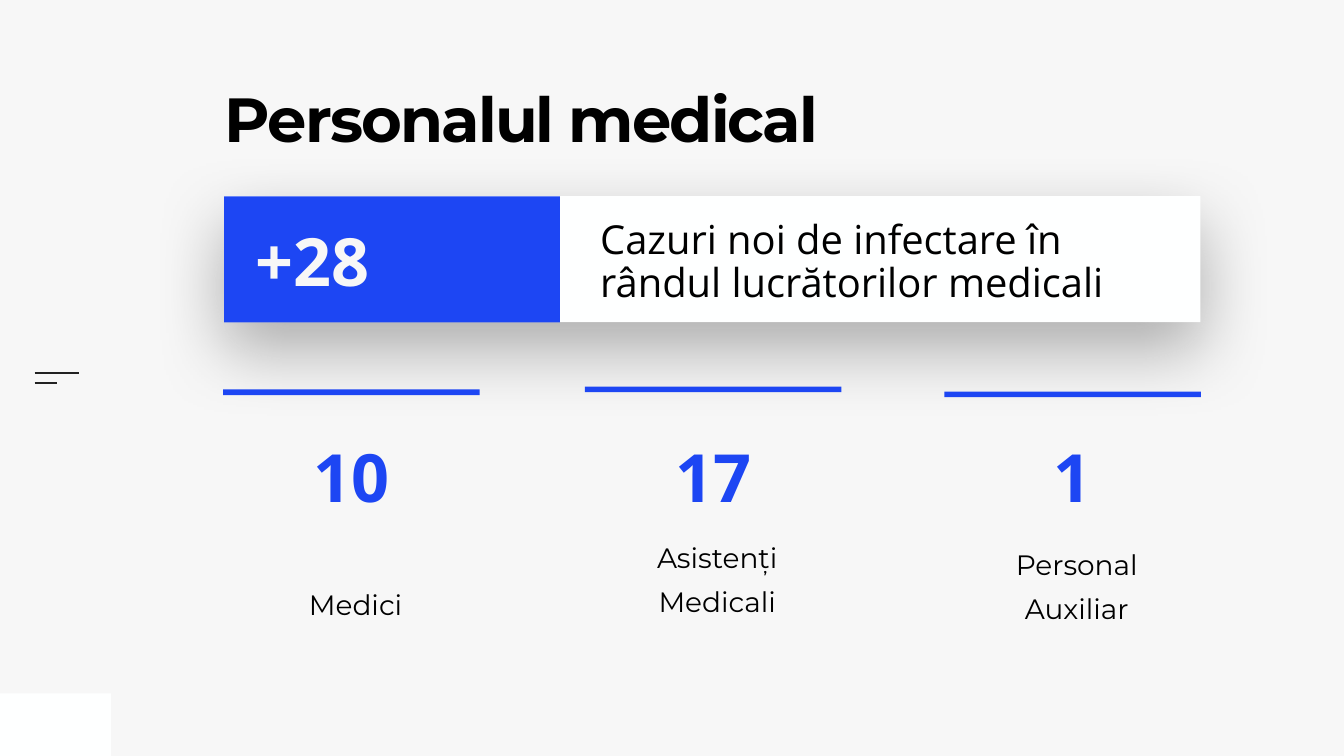
from lxml.etree import SubElement
from pptx import Presentation
from pptx.dml.color import RGBColor
from pptx.enum.shapes import MSO_CONNECTOR, MSO_SHAPE
from pptx.enum.text import MSO_ANCHOR, PP_ALIGN
from pptx.oxml.ns import qn
from pptx.util import Cm, Pt

COLORS = {
    "background": "F7F7F7",
    "white": "FEFFFF",
    "blue": "1D46F3",
    "black": "000000",
    "menu": "222222",
}

# Text formats: frame, paragraph and font values
NO_MARGINS = {f"margin_{side}": 0 for side in ("left", "top", "right", "bottom")}
BOX_FRAME = {side: Cm(0.25) for side in NO_MARGINS} | {"vertical_anchor": MSO_ANCHOR.MIDDLE}
LABEL_FRAME = {
    "margin_left": Cm(1.4), "margin_top": Cm(1.8),
    "margin_right": Cm(0.99), "margin_bottom": Cm(2.21),
    "vertical_anchor": MSO_ANCHOR.BOTTOM,
}
TITLE_FONT = {"name": "Montserrat", "size": Pt(89), "bold": True}
LABEL_FONT = {"name": "Montserrat", "size": Pt(40), "bold": False}
MESSAGE_FONT = {"name": "Open Sans", "size": Pt(57), "bold": False}
NUMBER_FONT = {"name": "Open Sans", "size": Pt(95), "bold": True}
LABEL_PARAGRAPH = {"alignment": PP_ALIGN.CENTER, "line_spacing": 1.3, "space_before": Pt(20)}

# Number, label, left, panel top, bar top
CARD_WIDTH = 12.93
CARDS = [
    ("10", "Medici", 11.25, 19.63, 19.63),
    ("17", "Asistenți Medicali", 29.48, 19.48, 19.48),
    ("1", "Personal Auxiliar", 47.6, 19.84, 19.74),
]


def rgb(color):
    return RGBColor.from_string(COLORS[color])


def apply_format(target, values):
    for name, value in values.items():
        setattr(target, name, value)


def write_text(frame, text, color, font, frame_format, paragraph_format):
    apply_format(frame, {"word_wrap": True} | frame_format)
    paragraph = frame.paragraphs[0]
    apply_format(paragraph, {"alignment": PP_ALIGN.LEFT} | paragraph_format)
    run = paragraph.add_run()
    run.text = text
    apply_format(run.font, font)
    run.font.color.rgb = rgb(color)
    return run


def add_block(slide, box, color):
    block = slide.shapes.add_shape(MSO_SHAPE.RECTANGLE, *map(Cm, box))
    block.shadow.inherit = False
    block.fill.solid()
    block.fill.fore_color.rgb = rgb(color)
    block.line.fill.background()
    return block


def add_text(slide, box, text, color, font, frame_format=BOX_FRAME, **paragraph_format):
    frame = slide.shapes.add_textbox(*map(Cm, box)).text_frame
    return write_text(frame, text, color, font, frame_format, paragraph_format)


def add_menu_line(slide, left, right, top):
    stroke = slide.shapes.add_connector(
        MSO_CONNECTOR.STRAIGHT, Cm(left), Cm(top), Cm(right), Cm(top))
    stroke.line.color.rgb = rgb("menu")
    stroke.line.width = Pt(3)
    SubElement(stroke._element.spPr, qn("a:effectLst"))


def add_soft_shadow(block):
    effects = block._element.spPr.find(qn("a:effectLst"))
    shadow = SubElement(effects, qn("a:outerShdw"), blurRad=str(Pt(100)),
                        dist=str(Pt(40)), dir="5400000", rotWithShape="0")
    tint = SubElement(shadow, qn("a:srgbClr"), val=COLORS["black"])
    SubElement(tint, qn("a:alpha"), val="30000")


def add_banner(slide):
    panel = add_block(slide, (11.3, 9.88, 49.2, 6.35), "white")
    add_soft_shadow(panel)
    add_text(slide, (30, 10.55, 29.87, 5.38),
             "Cazuri noi de infectare în rândul lucrătorilor medicali",
             "black", MESSAGE_FONT, line_spacing=0.9)
    add_block(slide, (11.3, 9.9, 16.92, 6.35), "blue")
    add_text(slide, (12.65, 10.8, 15.32, 4.57), "+28", "background", NUMBER_FONT)


def main():
    presentation = Presentation()
    presentation.slide_width, presentation.slide_height = Cm(67.74), Cm(38.1)
    slide = presentation.slides.add_slide(presentation.slide_layouts[6])
    slide.background.fill.solid()
    slide.background.fill.fore_color.rgb = rgb("background")

    # Page decoration
    add_block(slide, (0, 34.95, 5.59, 3.15), "white")
    add_menu_line(slide, 1.75, 3.99, 18.82)
    add_menu_line(slide, 1.75, 2.87, 19.28)

    # Card panels with their labels
    for _, label, left, panel_top, _ in CARDS:
        panel = add_block(slide, (left, panel_top, CARD_WIDTH, 13.87), "background")
        write_text(panel.text_frame, label, "black", LABEL_FONT, LABEL_FRAME, LABEL_PARAGRAPH)

    # Title
    title = add_text(slide, (11.33, 4.75, 33.05, 6.93), "Personalul medical",
                     "black", TITLE_FONT, NO_MARGINS, line_spacing=0.8)
    title.font._element.set("spc", "-270")

    # Banner, whose shadow falls on the panels
    add_banner(slide)

    # Bars and numbers of the cards
    for number, _, left, _, bar_top in CARDS:
        add_block(slide, (left, bar_top, CARD_WIDTH, 0.28), "blue")
        add_text(slide, (left, 21.69, CARD_WIDTH, 4.57), number, "blue",
                 NUMBER_FONT, alignment=PP_ALIGN.CENTER)

    presentation.save("out.pptx")


if __name__ == "__main__":
    main()
